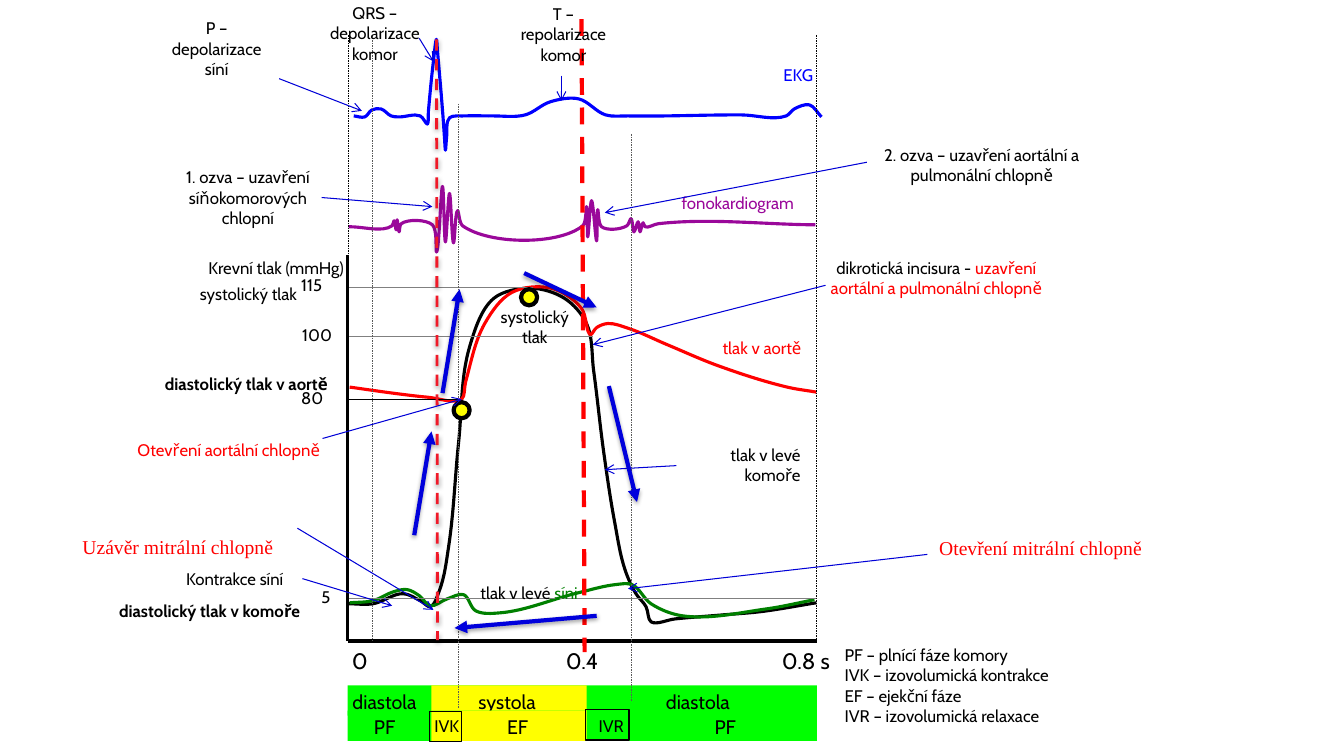
from lxml import etree
from pptx import Presentation
from pptx.dml.color import RGBColor
from pptx.enum.dml import MSO_LINE
from pptx.enum.shapes import MSO_CONNECTOR, MSO_SHAPE
from pptx.enum.text import MSO_AUTO_SIZE, PP_ALIGN
from pptx.oxml.ns import qn
from pptx.util import Pt

STRAIGHT = MSO_CONNECTOR.STRAIGHT
RECTANGLE, OVAL = MSO_SHAPE.RECTANGLE, MSO_SHAPE.OVAL
DASH = MSO_LINE.DASH
LEFT, CENTER, RIGHT = PP_ALIGN.LEFT, PP_ALIGN.CENTER, PP_ALIGN.RIGHT
GROW = MSO_AUTO_SIZE.SHAPE_TO_FIT_TEXT
BLACK = RGBColor(0x00, 0x00, 0x00)
GRAY = RGBColor(0x80, 0x80, 0x80)
DARK_GRAY = RGBColor(0x59, 0x59, 0x59)
RED = RGBColor(0xFF, 0x00, 0x00)
CRIMSON = RGBColor(0xF0, 0x19, 0x28)
BLUE = RGBColor(0x00, 0x00, 0xFF)
CALLOUT_BLUE = RGBColor(0x00, 0x00, 0xD7)
ARROW_BLUE = RGBColor(0x00, 0x00, 0xDC)
PURPLE = RGBColor(0x9A, 0x08, 0x9A)
DARK_GREEN = RGBColor(0x00, 0x80, 0x00)
GREEN = RGBColor(0x00, 0xFF, 0x00)
YELLOW = RGBColor(0xFF, 0xFF, 0x00)
SERIF = "Times New Roman"
AXIS_LEFT, AXIS_RIGHT, AXIS_BOTTOM = 248.4, 583.5, 457.9

deck = Presentation()
deck.slide_width, deck.slide_height = Pt(960), Pt(540)
page = deck.slides.add_slide(deck.slide_layouts[6])


def add_label(left, top, width, words, color=BLACK, align=CENTER, size=12, font="Cabin", bold=False):
    lines = words.split("\n")
    box = page.shapes.add_textbox(Pt(left), Pt(top), Pt(width), Pt(7.2 + 1.2 * size * len(lines)))
    frame = box.text_frame
    frame.word_wrap = True
    frame.auto_size = GROW
    frame.text = words
    for para in frame.paragraphs:
        para.alignment = align
        para.font.name, para.font.size, para.font.bold = font, Pt(size), bold
        para.font.color.rgb = color
    return frame.paragraphs[0]


def add_line(x1, y1, x2, y2, color, width, dash=None, head=None, shadow=False):
    line = page.shapes.add_connector(STRAIGHT, Pt(x1), Pt(y1), Pt(x2), Pt(y2))
    line.line.color.rgb, line.line.width = color, Pt(width)
    if dash:
        line.line.dash_style = dash
    if head:
        etree.SubElement(line.get_or_add_ln(), qn("a:tailEnd"), type=head)
    effects = etree.SubElement(line.element.spPr, qn("a:effectLst"))
    if shadow:
        outer = etree.SubElement(effects, qn("a:outerShdw"), blurRad=str(Pt(3.1)),
                                 dist=str(Pt(1.7)), dir="5400000", rotWithShape="0")
        tint = etree.SubElement(outer, qn("a:srgbClr"), val="000000")
        etree.SubElement(tint, qn("a:alpha"), val="36000")


phase_rows = [
    (489.6, [(231.1, "diastola"), (318.6, "systola"), (455, "diastola")]),
    (507.6, [(231.1, "PF"), (326.2, "EF"), (474.5, "PF")]),
]
for top, phases in phase_rows:
    for left, right, color in [(AXIS_LEFT, AXIS_RIGHT, GREEN), (308.2, 419, YELLOW)]:
        band = page.shapes.add_shape(RECTANGLE, Pt(left), Pt(top), Pt(right - left), Pt(21.6))
        band.shadow.inherit = False
        band.fill.solid()
        band.fill.fore_color.rgb = color
        band.line.fill.background()
    for left, phase in phases:
        add_label(left, top - 0.7, 87.1, phase, size=14)

for left, top, width, text_left, phase in [(306.7, 508.3, 23, 303.1, "IVK"), (418.3, 506.9, 31, 420.5, "IVR")]:
    add_label(text_left, 508, 44.6, phase, align=LEFT)
    border = page.shapes.add_shape(RECTANGLE, Pt(left), Pt(top), Pt(width), Pt(21.6))
    border.shadow.inherit = False
    border.fill.background()
    border.line.color.rgb, border.line.width = BLACK, Pt(1)

ventricle = [
    (249.1, 431.3), (266.4, 431.3), (288, 424.1), (300.2, 429.1), (307.4, 433.4), (313.9, 421.9),
    (320.4, 391), (327.6, 316.1), (335.5, 247.7), (352.8, 213.1), (378.7, 205.9), (403.2, 213.1),
    (419, 231.1), (424.1, 265), (431.3, 323.3), (439.2, 373.7), (446.4, 406.8), (454.3, 424.1),
    (461.5, 433.4), (465.1, 444.2), (482.4, 442.1), (517, 439.2), (542.9, 437), (583.2, 430.6)]
aorta = [
    (249.8, 276.5), (285.8, 281.5), (305.3, 283.7), (329.8, 285.1), (332.6, 272.9), (346.3, 231.1),
    (365.8, 208.8), (393.8, 205.9), (415.4, 220.3), (421.9, 239), (426.2, 234), (434.2, 231.1),
    (449.3, 234.7), (476.6, 246.2), (513.4, 261.4), (562.3, 276.5), (583.2, 280.1)]
ecg = [
    (252.7, 82.8), (260.6, 83.5), (265.7, 78.5), (272.2, 77.8), (279.4, 82.8), (284.4, 83.5),
    (300.2, 82.8), (305.3, 88.6), (306, 79.9), (309.6, 43.9), (311.8, 28.1), (312.5, 36),
    (316.1, 78.5), (317.5, 97.9), (318.2, 107.3), (319, 98.6), (321.1, 84.2), (332.6, 82.8),
    (351.4, 82.8), (375.1, 82.1), (393.1, 72.7), (413.3, 70.6), (432.7, 82.1), (448.6, 82.8),
    (529.9, 82.1), (561.6, 82.8), (567.4, 77.8), (578.2, 74.9), (586.8, 83.5)]
heart_sounds = [
    (249.1, 162), (280.1, 161.3), (281.5, 157.7), (283, 164.2), (283.7, 157), (285.1, 165.6),
    (286.6, 159.8), (308.9, 160.6), (311.8, 180), (316.1, 133.2), (318.2, 172.8), (321.1, 138.2),
    (324, 173.5), (326.9, 150.5), (330.5, 161.3), (416.2, 161.3), (419, 147.6), (419.8, 169.2),
    (422.6, 143.3), (426.2, 172.1), (427, 149.8), (429.8, 162), (447.8, 161.3), (450.7, 156.2),
    (452.9, 165.6), (455.8, 158.4), (457.2, 165.6), (459.4, 159.1), (460.8, 162), (470.2, 159.8),
    (582.5, 160.6)]
atrium = [
    (249.8, 430.6), (266.4, 429.1), (281.5, 422.6), (290.9, 421.2), (299.5, 425.5), (307.4, 432.7),
    (319.7, 427.7), (331.2, 424.8), (339.8, 436.3), (357.1, 437.8), (413.3, 423.4), (439.9, 417.6),
    (451.4, 417.6), (465.1, 431.3), (487.4, 439.9), (547.9, 434.9), (581.8, 428.4)]
curves = [(ventricle, BLACK), (aorta, RED), (ecg, BLUE), (heart_sounds, PURPLE), (atrium, DARK_GREEN)]
for knots, color in curves:
    knots = [complex(x, y) for x, y in knots]
    units = [(b - a) / abs(b - a) for a, b in zip(knots, knots[1:])]
    slopes = [(a + b) / 2 for a, b in zip(units[:1] + units, units + units[-1:])]
    controls = []
    for start, end, leave, arrive in zip(knots, knots[1:], slopes, slopes[1:]):
        reach = abs(end - start) / 3
        controls += [start + reach * leave, end - reach * arrive, end]
    builder = page.shapes.build_freeform(Pt(knots[0].real), Pt(knots[0].imag))
    builder.add_line_segments([(Pt(spot.real), Pt(spot.imag)) for spot in controls], close=False)
    curve = builder.convert_to_shape()
    curve.shadow.inherit = False
    curve.fill.background()
    curve.line.color.rgb, curve.line.width = color, Pt(2.25)
    outline = curve.element.find(".//" + qn("a:path"))
    segments = outline.findall(qn("a:lnTo"))
    for trio in zip(segments[::3], segments[1::3], segments[2::3]):
        bend = etree.SubElement(outline, qn("a:cubicBezTo"))
        for segment in trio:
            bend.append(segment[0])
            outline.remove(segment)

for y, right, color in [(427, 583.2, GRAY), (285.1, 329, BLACK), (239.8, 423.4, GRAY), (205.2, 380.9, GRAY)]:
    add_line(AXIS_LEFT, y, right, y, color, 0.25)
add_line(AXIS_LEFT, AXIS_BOTTOM, AXIS_RIGHT, AXIS_BOTTOM, BLACK, 3)
add_line(AXIS_LEFT, 182.2, AXIS_LEFT, AXIS_BOTTOM, BLACK, 2.25)
add_line(311.8, 28.1, 312.5, 457.2, CRIMSON, 2, DASH, shadow=True)
add_line(415.4, 13.7, 417.6, 465.8, RED, 3, DASH)
for x, top, bottom, color in [
        (AXIS_LEFT, 25.2, AXIS_BOTTOM, BLACK), (265.7, 25.2, AXIS_BOTTOM, DARK_GRAY),
        (327.6, 74.2, 506.2, DARK_GRAY), (450.7, 95.8, 501.1, DARK_GRAY),
        (583.2, 25.2, AXIS_BOTTOM, BLACK)]:
    add_line(x, top, x, bottom, color, 0.25, DASH)

for left, width, words in [(236.9, 40.3, "0"), (388.8, 54, "0.4"), (544.3, 62.6, "0.8 s")]:
    add_label(left, 458.4, width, words, size=16)
for left, top, words in [(208, 193, "115"), (208.8, 228.2, "100"), (208, 273.6, "80"), (222.5, 415.4, "5")]:
    add_label(left, top, 44.6, words, align=LEFT)

for left, top, width, words, color in [
        (110.9, 9.4, 87.8, "P – depolarizace síní", BLACK),
        (227.5, -1.4, 80.6, "QRS – depolarizace komor", BLACK),
        (358.6, -0.7, 87.8, "T – repolarizace komor", BLACK),
        (547.9, 42.5, 44.6, "EKG", BLUE),
        (457.9, 133.9, 138.2, "fonokardiogram", PURPLE),
        (475.2, 237.6, 138.2, "tlak v aortě", RED),
        (124.6, 115.9, 105.1, "1. ozva – uzavření síňokomorových chlopní", BLACK),
        (604.8, 100.1, 193, "2. ozva – uzavření aortální a pulmonální chlopně", BLACK),
        (72.7, 310.3, 181.4, "Otevření aortální chlopně", RED),
        (348.5, 215.3, 67, "systolický tlak", BLACK),
        (115.2, 199.4, 124.6, "systolický tlak", BLACK),
        (123.8, 402.5, 87.8, "Kontrakce síní", BLACK)]:
    add_label(left, top, width, words, color)
add_label(472.3, 313.9, 106.6, "tlak v levé komoře", align=RIGHT)
add_label(141.8, 180.7, 131, "Krevní tlak (mmHg)", align=LEFT)
add_label(67, 425.5, 165.6, "diastolický tlak v komoře", bold=True)
add_label(90.7, 263.5, 170.6, "diastolický tlak v aortě", bold=True)
add_label(51.8, 378.7, 181.4, "Uzávěr mitrální chlopně", RED, LEFT, 14, SERIF)
add_label(663.8, 379.4, 208, "Otevření mitrální chlopně", RED, LEFT, 14, SERIF)
add_label(596.2, 457.2, 187.2, "PF – plnící fáze komory\nIVK – izovolumická kontrakce\n"
          "EF – ejekční fáze\nIVR – izovolumická relaxace", align=LEFT)
notch = add_label(573.8, 180.7, 190.1, "dikrotická incisura - ")
atrial = add_label(313.2, 412.6, 106.6, "tlak v levé", align=RIGHT)
for para, words, color in [(notch, "uzavření aortální a pulmonální chlopně", RED), (atrial, " síni", DARK_GREEN)]:
    span = para.add_run()
    span.text = words
    span.font.color.rgb = color

for left, top in [(372.2, 206.6), (324, 287.3)]:
    marker = page.shapes.add_shape(OVAL, Pt(left), Pt(top), Pt(11.5), Pt(11.5))
    marker.shadow.inherit = False
    marker.fill.solid()
    marker.fill.fore_color.rgb = YELLOW
    marker.line.color.rgb, marker.line.width = BLACK, Pt(3)

for ends in [
        (199.4, 56.2, 258.5, 79.2), (299.5, 27.4, 309.6, 43.9), (401, 54, 401, 72),
        (619.2, 115.9, 432, 151.9), (229.7, 141.1, 308.9, 147.6), (230.4, 313.2, 329.8, 285.1),
        (589.7, 203.8, 423.4, 246.2), (483.1, 332.6, 432, 335.5), (216, 413.3, 280.1, 432.7),
        (212.4, 377.3, 309.6, 435.6), (662.4, 396, 448.6, 420.5)]:
    add_line(*ends, CALLOUT_BLUE, 0.75, head="arrow")
for ends in [
        (295.9, 382.3, 308.2, 308.2), (316.1, 280.8, 328.3, 206.6), (374.4, 195.1, 426.2, 219.6),
        (434.9, 275.8, 455, 358.6), (426.2, 439.9, 324.7, 448.6)]:
    add_line(*ends, ARROW_BLUE, 3, head="triangle", shadow=True)

deck.save("out.pptx")
